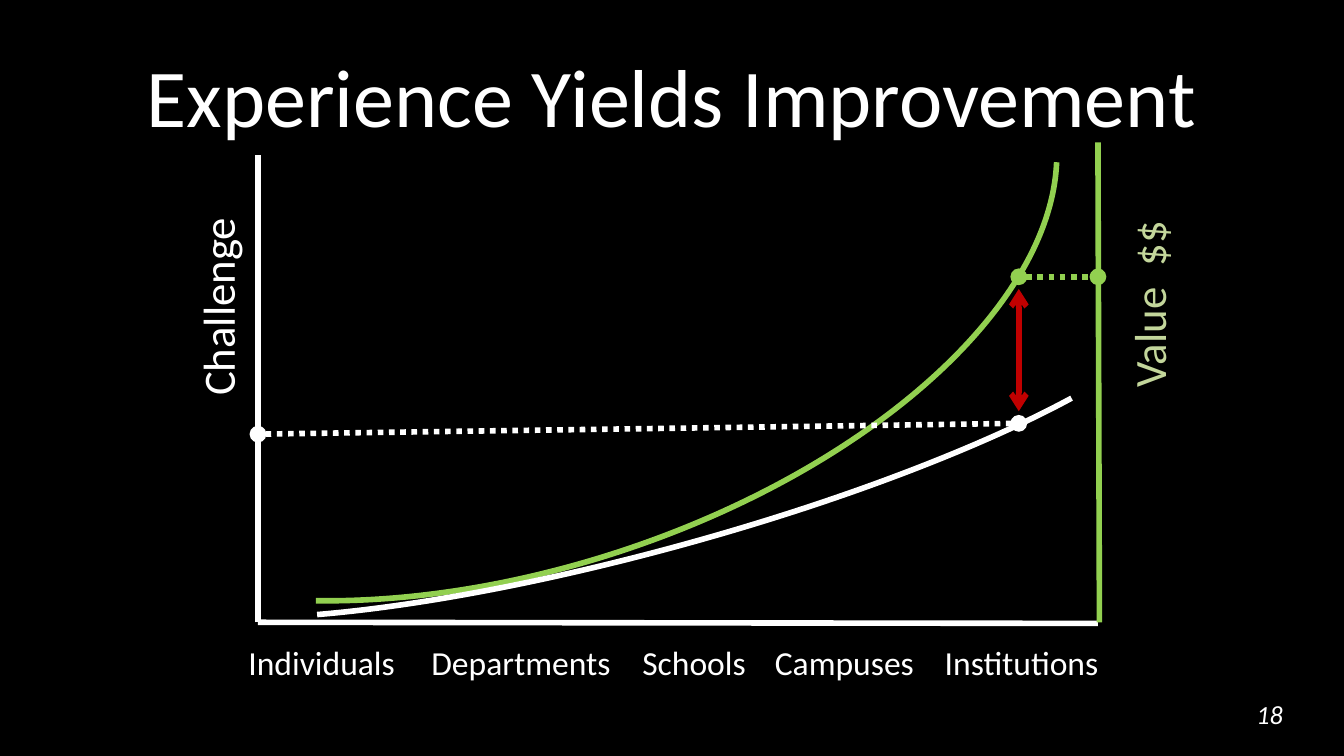
from lxml.etree import SubElement
from pptx import Presentation
from pptx.dml.color import RGBColor
from pptx.enum.dml import MSO_LINE
from pptx.enum.shapes import MSO_CONNECTOR, MSO_SHAPE
from pptx.enum.text import MSO_ANCHOR, MSO_AUTO_SIZE, PP_ALIGN
from pptx.oxml.ns import qn
from pptx.util import Pt

BLACK = RGBColor(0x00, 0x00, 0x00)
WHITE = RGBColor(0xFF, 0xFF, 0xFF)
GREEN = RGBColor(0x92, 0xD0, 0x50)
PALE_GREEN = RGBColor(0xC3, 0xD6, 0x9B)
RED = RGBColor(0xC0, 0x00, 0x00)

CHALLENGE_X, VALUE_X, BASE_Y = 138.2, 588.2, 333.4
GAP_X, VALUE_Y, CHALLENGE_Y = 545.8, 148.3, 226.8


def apply_format(target, values):
    """Set each attribute of the target from a dict of values."""
    for name, value in values.items():
        setattr(target, name, value)


def format_text(paragraph, text, size, color, italic=False):
    """Write one run of text in the slide's font."""
    run = paragraph.add_run()
    run.text = text
    apply_format(run.font, {"name": "Calibri", "size": Pt(size), "italic": italic})
    run.font.color.rgb = color


def add_tab_stops(paragraph, stops):
    """Give the paragraph left tab stops at the given points."""
    tab_list = SubElement(paragraph._p.get_or_add_pPr(), qn("a:tabLst"))
    for stop in stops:
        SubElement(tab_list, qn("a:tab"), pos=str(Pt(stop)), algn="l")


def add_label(slide, box, text, size, color, italic=False, rotation=0, stops=()):
    """Add a one-line text box, with optional rotation and tab stops."""
    shape = slide.shapes.add_textbox(*map(Pt, box))
    shape.rotation = rotation
    apply_format(shape.text_frame, {"word_wrap": True, "margin_right": Pt(0)})
    paragraph = shape.text_frame.paragraphs[0]
    if stops:
        add_tab_stops(paragraph, stops)
    format_text(paragraph, text, size, color, italic)


def add_title(slide, box, text):
    """Place and fill the title placeholder."""
    title = slide.shapes.title
    apply_format(title, dict(zip(("left", "top", "width", "height"), map(Pt, box))))
    apply_format(title.text_frame, {
        "word_wrap": True,
        "auto_size": MSO_AUTO_SIZE.NONE,
        "vertical_anchor": MSO_ANCHOR.MIDDLE,
    })
    paragraph = title.text_frame.paragraphs[0]
    paragraph.alignment = PP_ALIGN.CENTER
    format_text(paragraph, text, 44, WHITE)


def add_line(slide, start, end, color, dash=None, ends=None):
    """Add a straight line, with an optional dash and the same mark at both ends."""
    connector = slide.shapes.add_connector(
        MSO_CONNECTOR.STRAIGHT, *map(Pt, (*start, *end)))
    connector.line.color.rgb = color
    apply_format(connector.line, {"width": Pt(3), "dash_style": dash})
    if ends:
        outline = connector.line._get_or_add_ln()
        for tag in ("a:headEnd", "a:tailEnd"):
            SubElement(outline, qn(tag), type=ends)
    SubElement(connector._element.spPr, qn("a:effectLst"))


def add_curve(slide, box, rotation, angles, color):
    """Add a mirrored, rotated arc as a growth curve."""
    arc = slide.shapes.add_shape(MSO_SHAPE.ARC, *map(Pt, box))
    arc.rotation = rotation
    arc._element.spPr.xfrm.set("flipH", "1")
    for index, angle in enumerate(angles):
        arc.adjustments[index] = angle
    arc.shadow.inherit = False
    arc.fill.background()
    arc.line.color.rgb = color
    arc.line.width = Pt(3)


def main():
    """Build the slide and save it."""
    presentation = Presentation()
    apply_format(presentation, {"slide_width": Pt(720), "slide_height": Pt(405)})
    slide = presentation.slides.add_slide(presentation.slide_layouts[5])
    slide.background.fill.solid()
    slide.background.fill.fore_color.rgb = BLACK

    add_label(slide, (666, 370.8, 31, 24.5), "18", 14, WHITE, italic=True)
    add_title(slide, (36, 16.6, 648, 67.7), "Experience Yields Improvement")

    add_line(slide, (CHALLENGE_X, BASE_Y), (CHALLENGE_X, 82.8), WHITE)
    add_line(slide, (CHALLENGE_X, BASE_Y), (VALUE_X, 334), WHITE)
    stages = ("Individuals", "Departments", "Schools", "Campuses", "Institutions")
    add_label(slide, (126, 340.6, 476.6, 28.8), "\t".join(stages), 18, WHITE,
              stops=(98, 211, 282, 373))
    add_label(slide, (59.8, 144.7, 113, 36), "Challenge", 24, WHITE, rotation=270)
    add_line(slide, (589, BASE_Y), (VALUE_X, 76.3), GREEN)
    add_label(slide, (563, 144.7, 104.4, 36), "Value\t$$", 24, PALE_GREEN,
              rotation=270, stops=(65,))

    add_curve(slide, (-18, -11.5, 594, 316), 162.4, (132.2, 212.48), GREEN)
    add_curve(slide, (54, 171.4, 592.6, 122.4), 164.6, (115.66, 209.72), WHITE)

    add_line(slide, (GAP_X, CHALLENGE_Y), (CHALLENGE_X, 232.6), WHITE,
             MSO_LINE.ROUND_DOT, "oval")
    add_line(slide, (GAP_X, VALUE_Y), (VALUE_X, VALUE_Y), GREEN,
             MSO_LINE.ROUND_DOT, "oval")
    add_line(slide, (GAP_X, VALUE_Y + 6.5), (GAP_X, CHALLENGE_Y - 6.5), RED,
             ends="arrow")
    presentation.save("out.pptx")


if __name__ == "__main__":
    main()
